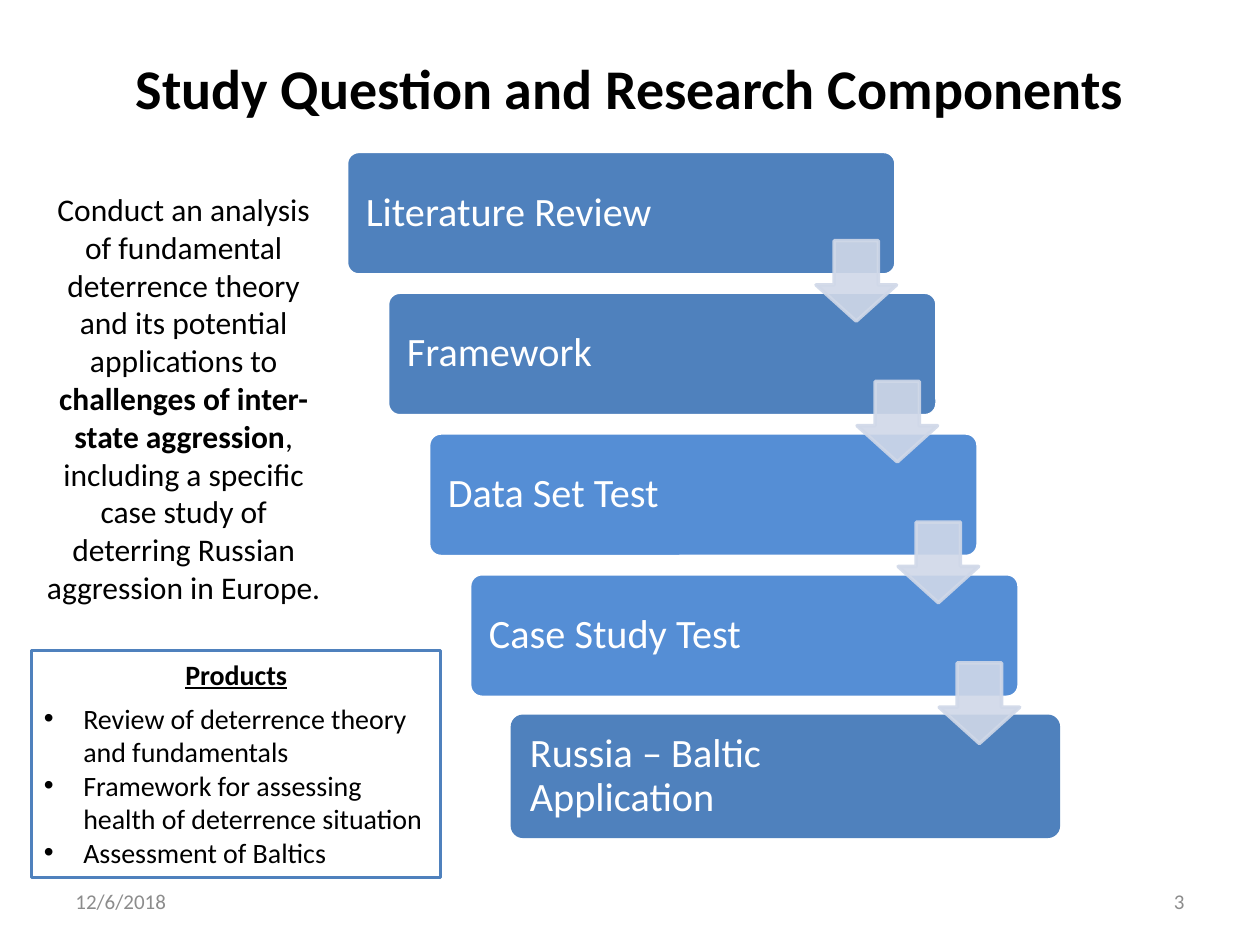
from lxml import etree
from pptx import Presentation
from pptx.dml.color import RGBColor
from pptx.enum import shapes, text
from pptx.oxml.ns import qn
from pptx.util import Pt

HUES = {"ink": "000000", "paper": "FFFFFF", "gray": "8C8C8C",
        "blue": "4F81BD", "sky": "558ED5", "mist": "D0D8E8"}
FORMS = shapes.MSO_SHAPE
ALIGN = text.PP_ALIGN
MIDDLE = text.MSO_ANCHOR.MIDDLE

STEPS = [("Literature Review", "blue"), ("Framework", "blue"),
         ("Data Set Test", "sky"), ("Case Study Test", "sky"),
         ("Russia – Baltic Application", "blue")]
GOAL = [("Conduct an analysis of fundamental deterrence theory "
         "and its potential applications to ", False),
        ("challenges of inter-state aggression", True),
        (", including a specific case study of deterring Russian "
         "aggression in Europe.", False)]
GOODS = ["Review of deterrence theory and fundamentals",
         "Framework for assessing health of deterrence situation",
         "Assessment of Baltics"]


def tint(hue):
    return RGBColor.from_string(HUES[hue])


def write(para, words, size=18, hue="ink", bold=False, under=False,
          align=ALIGN.LEFT):
    """Add one formatted run to a paragraph."""
    para.alignment = align
    run = para.add_run()
    run.text = words
    font = run.font
    font.name, font.size = "Calibri", Pt(size)
    font.bold, font.underline = bold, under
    font.color.rgb = tint(hue)


def mark(para, sign=None, gap=22.5):
    """Give a paragraph a hanging bullet, or none."""
    props = para._p.get_or_add_pPr()
    props.set("marL", str(Pt(gap) if sign else 0))
    props.set("indent", str(-Pt(gap) if sign else 0))
    if sign:
        etree.SubElement(props, qn("a:buFont")).set("typeface", "Arial")
        etree.SubElement(props, qn("a:buChar")).set("char", sign)
    else:
        etree.SubElement(props, qn("a:buNone"))


def fade(shape, share):
    """Set the opacity, in percent, of a shape's fill and line."""
    for color in shape._element.spPr.iter(qn("a:srgbClr")):
        etree.SubElement(color, qn("a:alpha")).set("val", str(share * 1000))


class Deck:
    def __init__(self):
        self.show = Presentation()
        self.show.slide_width, self.show.slide_height = Pt(720), Pt(540)
        self.slide = self.show.slides.add_slide(self.show.slide_layouts[1])

    def holder(self, index, box):
        """Move a placeholder and return its text frame."""
        item = self.slide.placeholders[index]
        item.left, item.top, item.width, item.height = map(Pt, box)
        frame = item.text_frame
        frame.word_wrap = True
        frame.auto_size = text.MSO_AUTO_SIZE.NONE
        return frame

    def title(self, words, box):
        frame = self.holder(0, box)
        frame.vertical_anchor = MIDDLE
        write(frame.paragraphs[0], words, size=32, bold=True,
              align=ALIGN.CENTER)

    def body(self, parts, box):
        para = self.holder(1, box).paragraphs[0]
        para.space_before = Pt(0)
        mark(para)
        for words, bold in parts:
            write(para, words, bold=bold, align=ALIGN.CENTER)

    def label(self, words, box, align=ALIGN.LEFT):
        frame = self.slide.shapes.add_textbox(*map(Pt, box)).text_frame
        frame.word_wrap = True
        frame.vertical_anchor = MIDDLE
        write(frame.paragraphs[0], words, size=12, hue="gray", align=align)

    def shape(self, form, box, fill=None, line=None, width=2, adjust=()):
        item = self.slide.shapes.add_shape(form, *map(Pt, box))
        item.shadow.inherit = False
        for spot, value in enumerate(adjust):
            item.adjustments[spot] = value
        if fill:
            item.fill.solid()
            item.fill.fore_color.rgb = tint(fill)
        else:
            item.fill.background()
        if line:
            item.line.color.rgb = tint(line)
            item.line.width = Pt(width)
        else:
            item.line.fill.background()
        return item

    def step(self, words, hue, box, line):
        item = self.shape(FORMS.ROUNDED_RECTANGLE, box, hue, line,
                          adjust=[0.1])
        frame = item.text_frame
        frame.word_wrap = True
        frame.vertical_anchor = MIDDLE
        frame.margin_left, frame.margin_right = Pt(9), Pt(79)
        para = frame.paragraphs[0]
        para.line_spacing = 0.9
        write(para, words, size=23, hue="paper")

    def arrow(self, box):
        item = self.shape(FORMS.DOWN_ARROW, box, "mist", "mist",
                          adjust=[0.55, 0.45])
        fade(item, 90)

    def panel(self, head, lines, box):
        """Draw a framed box with a heading and a bullet list."""
        frame = self.shape(FORMS.RECTANGLE, box, line="blue",
                           width=1.75).text_frame
        frame.word_wrap = True
        frame.vertical_anchor = text.MSO_ANCHOR.TOP
        para = frame.paragraphs[0]
        para.space_after = Pt(6)
        write(para, head, size=16, bold=True, under=True,
              align=ALIGN.CENTER)
        for words in lines:
            para = frame.add_paragraph()
            mark(para, "•")
            write(para, words, size=16)


def main():
    deck = Deck()
    deck.title("Study Question and Research Components",
               (36, 21.6, 648, 56.2))
    deck.body(GOAL, (18, 105, 174, 243.5))
    deck.label("12/6/2018", (36, 500.5, 168, 28.75))
    deck.label("3", (516, 500.5, 168, 28.75), ALIGN.RIGHT)

    right, down = 23.45, 80.45
    last = len(STEPS) - 1
    for i, (words, hue) in enumerate(STEPS):
        deck.step(words, hue, (198 + i * right, 86.5 + i * down, 314, 70.6),
                  None if i == last else "paper")
    for i in range(last):
        deck.arrow((466.3 + i * right, 137.5 + i * down, 46, 46))

    deck.panel("Products", GOODS, (18, 372, 234, 129.6))
    deck.show.save("out.pptx")


if __name__ == "__main__":
    main()
